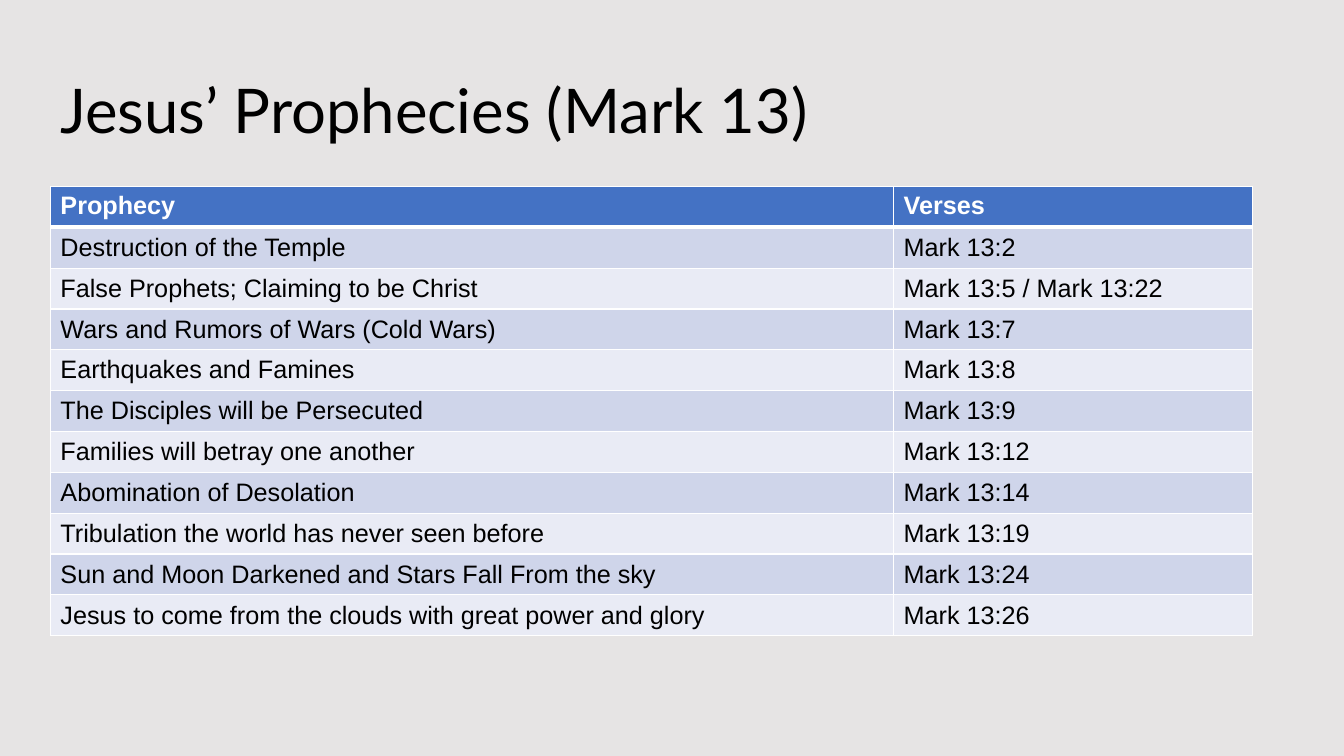
from lxml import etree
from pptx import Presentation
from pptx.dml.color import RGBColor
from pptx.enum.text import MSO_ANCHOR, PP_ALIGN
from pptx.oxml.ns import qn
from pptx.util import Inches, Pt

LEFT = PP_ALIGN.LEFT
TOP, MIDDLE = MSO_ANCHOR.TOP, MSO_ANCHOR.MIDDLE
TITLE_ONLY = 5

COLORS = {
    "background": "E6E4E4",
    "text": "000000",
    "header": "4472C4",
    "header_text": "FFFFFF",
    "odd_row": "CFD5EA",
    "even_row": "E9EBF5",
    "border": "FFFFFF",
}
TITLE_FONT = {"name": "Lato", "size": Pt(44), "bold": False}
CELL_FONT = {"name": "Arial", "size": Pt(18), "bold": False}
HEADER_FONT = {**CELL_FONT, "bold": True}

TITLE = "Jesus’ Prophecies (Mark 13)"
PROPHECIES = [
    ("Prophecy", "Verses"),
    ("Destruction of the Temple", "Mark 13:2"),
    ("False Prophets; Claiming to be Christ", "Mark 13:5 / Mark 13:22"),
    ("Wars and Rumors of Wars (Cold Wars)", "Mark 13:7"),
    ("Earthquakes and Famines", "Mark 13:8"),
    ("The Disciples will be Persecuted", "Mark 13:9"),
    ("Families will betray one another", "Mark 13:12"),
    ("Abomination of Desolation", "Mark 13:14"),
    ("Tribulation the world has never seen before", "Mark 13:19"),
    ("Sun and Moon Darkened and Stars Fall From the sky", "Mark 13:24"),
    ("Jesus to come from the clouds with great power and glory", "Mark 13:26"),
]


def color(name):
    """Return the named colour."""
    return RGBColor.from_string(COLORS[name])


def write_text(frame, text, font, color_name):
    """Write one left-aligned, formatted paragraph into a text frame."""
    para = frame.paragraphs[0]
    para.alignment = LEFT
    span = para.add_run()
    span.text = text
    for name, value in font.items():
        setattr(span.font, name, value)
    span.font.color.rgb = color(color_name)
    return para


def set_borders(cell, bottom, top):
    """Draw the four borders of a cell, with the given bottom and top widths."""
    properties = cell._tc.get_or_add_tcPr()
    widths = {"a:lnL": 1, "a:lnR": 1, "a:lnT": top, "a:lnB": bottom}
    for index, (tag, width) in enumerate(widths.items()):
        line = etree.Element(qn(tag), w=str(Pt(width)))
        fill = etree.SubElement(line, qn("a:solidFill"))
        etree.SubElement(fill, qn("a:srgbClr"), val=COLORS["border"])
        properties.insert(index, line)


def place_title(page, left, top, width, height):
    """Place and format the title in the given box."""
    title = page.shapes.title
    box = {"left": left, "top": top, "width": width, "height": height}
    for name, value in box.items():
        setattr(title, name, Inches(value))
    title.text_frame.word_wrap = True
    title.text_frame.vertical_anchor = MIDDLE
    para = write_text(title.text_frame, TITLE, TITLE_FONT, "text")
    para.line_spacing = 0.9


def place_prophecies(page, left, top, width, height):
    """Place the table of prophecies and verses in the given box."""
    frame = page.shapes.add_table(
        len(PROPHECIES), 2, Inches(left), Inches(top), Inches(width), Inches(height)
    )
    table = frame.table
    table.columns[0].width = Inches(width * 0.7016)
    table.columns[1].width = Inches(width * 0.2984)
    for row, texts in enumerate(PROPHECIES):
        header = row == 0
        fill = "header" if header else ("even_row", "odd_row")[row % 2]
        for column, text in enumerate(texts):
            cell = table.cell(row, column)
            cell.vertical_anchor = TOP if header else MIDDLE
            cell.fill.solid()
            cell.fill.fore_color.rgb = color(fill)
            set_borders(cell, bottom=3 if header else 1, top=3 if row == 1 else 1)
            write_text(
                cell.text_frame,
                text,
                HEADER_FONT if header else CELL_FONT,
                "header_text" if header else "text",
            )


def main():
    """Build the slide and save the deck."""
    deck = Presentation()
    deck.slide_width, deck.slide_height = Inches(13.33), Inches(7.5)
    page = deck.slides.add_slide(deck.slide_layouts[TITLE_ONLY])
    page.background.fill.solid()
    page.background.fill.fore_color.rgb = color("background")
    place_title(page, 0.5, 0.4, 11.92, 1.45)
    place_prophecies(page, 0.5, 1.85, 11.92, 4.46)
    deck.save("out.pptx")


if __name__ == "__main__":
    main()
